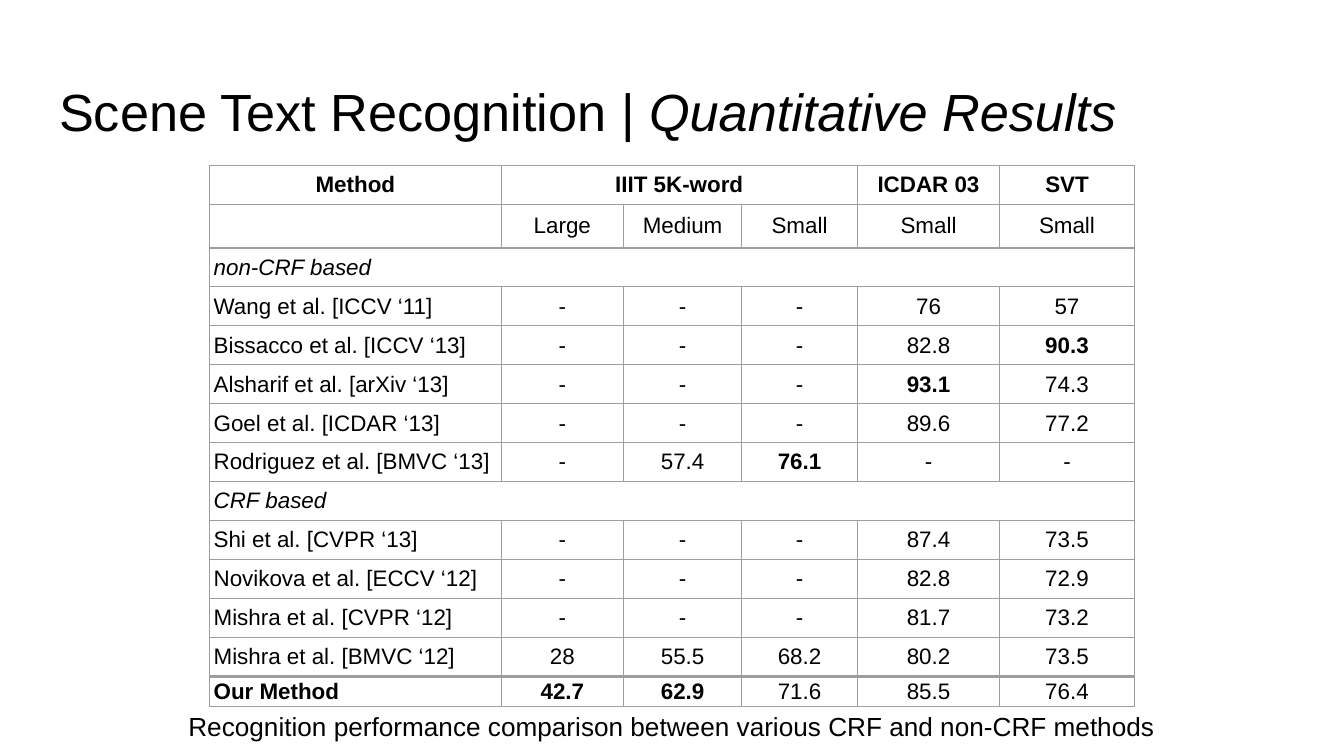
from lxml import etree
from pptx import Presentation
from pptx.dml.color import RGBColor
from pptx.enum import text as t
from pptx.oxml import ns
from pptx.util import Inches, Pt

BLACK = RGBColor(0, 0, 0)
GREY = RGBColor(0x9E, 0x9E, 0x9E)
LEFT, MID = t.PP_ALIGN.LEFT, t.PP_ALIGN.CENTER

# Content: "*" marks bold; a lone entry spans its row; None is spanned
TITLE = [("Scene Text Recognition | ", False), ("Quantitative Results", True)]
NOTE = "Recognition performance comparison between various CRF and non-CRF methods"
ROWS = [
    ["*Method", "*IIIT 5K-word", None, None, "*ICDAR 03", "*SVT"],
    ["", "Large", "Medium", "Small", "Small", "Small"],
    ["non-CRF based"],
    ["Wang et al. [ICCV ‘11]", "-", "-", "-", "76", "57"],
    ["Bissacco et al. [ICCV ‘13]", "-", "-", "-", "82.8", "*90.3"],
    ["Alsharif et al. [arXiv ‘13]", "-", "-", "-", "*93.1", "74.3"],
    ["Goel et al. [ICDAR ‘13]", "-", "-", "-", "89.6", "77.2"],
    ["Rodriguez et al. [BMVC ‘13]", "-", "57.4", "*76.1", "-", "-"],
    ["CRF based"],
    ["Shi et al. [CVPR ‘13]", "-", "-", "-", "87.4", "73.5"],
    ["Novikova et al. [ECCV ‘12]", "-", "-", "-", "82.8", "72.9"],
    ["Mishra et al. [CVPR ‘12]", "-", "-", "-", "81.7", "73.2"],
    ["Mishra et al. [BMVC ‘12]", "28", "55.5", "68.2", "80.2", "73.5"],
    ["*Our Method", "*42.7", "*62.9", "71.6", "85.5", "76.4"],
]
WIDTHS = [2.17, 0.91, 0.88, 0.86, 1.06, 1]
HEIGHTS = [0.29] * (len(ROWS) - 1) + [0.11]


def put(obj, **vals):
    for key, val in vals.items():
        setattr(obj, key, val)


def pad(obj, x, y):
    put(obj, margin_left=Inches(x), margin_right=Inches(x),
        margin_top=Inches(y), margin_bottom=Inches(y))


def write(para, words, size, align=LEFT, **vals):
    para.alignment = align
    run = para.add_run()
    run.text = words
    put(run.font, name="Arial", size=Pt(size), **vals)
    run.font.color.rgb = BLACK


def edge(cell, side, wide):
    props = cell._tc.get_or_add_tcPr()
    line = etree.SubElement(props, ns.qn(f"a:ln{side}"), w=str(Pt(wide)))
    fill = etree.SubElement(line, ns.qn("a:solidFill"))
    etree.SubElement(fill, ns.qn("a:srgbClr"), val=str(GREY))


# A 16:9 slide
deck = Presentation()
put(deck, slide_width=Inches(10), slide_height=Inches(10 * 9 / 16))
slide = deck.slides.add_slide(deck.slide_layouts[5])

# Title
head = slide.shapes.title
put(head, left=Inches(0.34), top=Inches(0.49),
    width=Inches(9.32), height=Inches(0.63))
frame = head.text_frame
pad(frame, 0.1, 0.1)
put(frame, vertical_anchor=t.MSO_ANCHOR.TOP, word_wrap=True,
    auto_size=t.MSO_AUTO_SIZE.NONE)
for words, slant in TITLE:
    write(frame.paragraphs[0], words, 28, italic=slant)

# Results table
grid = slide.shapes.add_table(
    len(ROWS), len(WIDTHS), Inches(1.56), Inches(1.23),
    Inches(sum(WIDTHS)), Inches(sum(HEIGHTS))).table
put(grid, first_row=False, horz_banding=False)
for col, wide in zip(grid.columns, WIDTHS):
    col.width = Inches(wide)
for row, high in zip(grid.rows, HEIGHTS):
    row.height = Inches(high)

last = len(ROWS) - 1
for r, row in enumerate(ROWS):
    group = len(row) == 1
    for c in range(len(WIDTHS)):
        cell = grid.cell(r, c)
        words = row[c] if c < len(row) else None
        pad(cell, 0.03, 0.02 if words else 0.01)
        cell.vertical_anchor = t.MSO_ANCHOR.MIDDLE
        # The last row is set off by a heavier rule
        for side in "LRTB":
            heavy = (r, side) in [(last - 1, "B"), (last, "T")]
            edge(cell, side, 1.5 if heavy else 0.75)
        cell.fill.background()
        if words:
            write(cell.text_frame.paragraphs[0], words.lstrip("*"), 12,
                  MID if c or r == 0 else LEFT,
                  bold=words.startswith("*"), italic=group)
    if group:
        grid.cell(r, 0).merge(grid.cell(r, len(WIDTHS) - 1))
grid.cell(0, 1).merge(grid.cell(0, 3))

# Caption
box = slide.shapes.add_textbox(Inches(1.15), Inches(5.24), Inches(7.7), Inches(0.32))
frame = box.text_frame
pad(frame, 0.1, 0.1)
put(frame, word_wrap=True, vertical_anchor=t.MSO_ANCHOR.MIDDLE)
write(frame.paragraphs[0], NOTE, 14, MID)

deck.save("out.pptx")
